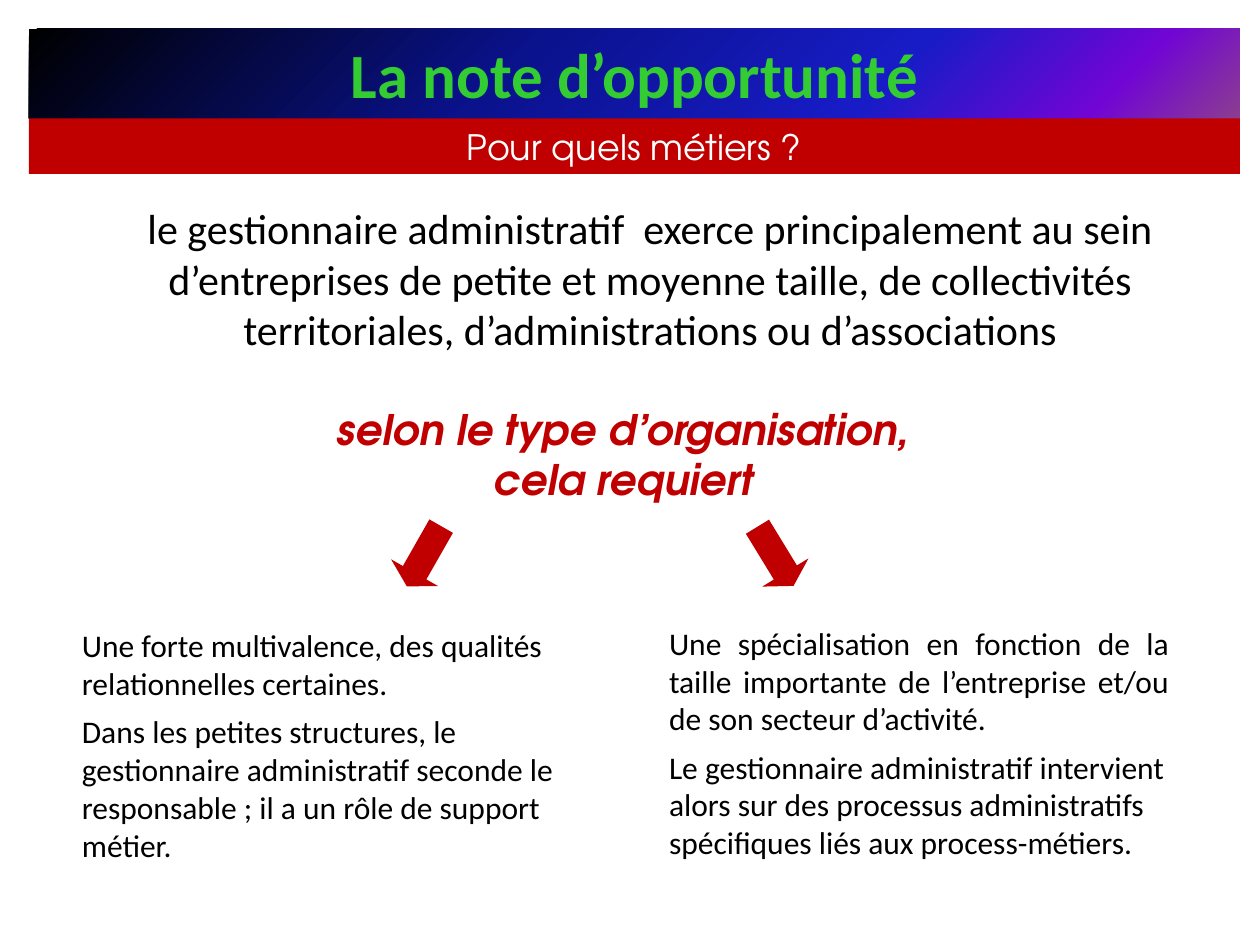
from lxml import etree
from pptx import Presentation
from pptx.dml.color import RGBColor
from pptx.enum.shapes import MSO_SHAPE
from pptx.enum.text import MSO_ANCHOR, MSO_AUTO_SIZE, PP_ALIGN
from pptx.oxml.ns import qn
from pptx.util import Inches, Pt

RECT, ARROW = MSO_SHAPE.RECTANGLE, MSO_SHAPE.DOWN_ARROW
TOP, MIDDLE = MSO_ANCHOR.TOP, MSO_ANCHOR.MIDDLE
LEFT, CENTER, JUSTIFY = PP_ALIGN.LEFT, PP_ALIGN.CENTER, PP_ALIGN.JUSTIFY
BLACK = RGBColor(0x00, 0x00, 0x00)
WHITE = RGBColor(0xFF, 0xFF, 0xFF)
RED = RGBColor(0xC0, 0x00, 0x00)
GREEN = RGBColor(0x33, 0xCC, 0x33)
STOPS = {0: BLACK, 40: RGBColor(0x0A, 0x12, 0x8C), 70: RGBColor(0x18, 0x1C, 0xC7),
         88: RGBColor(0x70, 0x05, 0xD4), 100: RGBColor(0x8C, 0x3D, 0x91)}
SANS, ROUND = "Calibri", "TeX Gyre Adventor"
EDGE, WIDE = 0.23, 9.61

deck = Presentation()
deck.slide_width, deck.slide_height = Inches(10), Inches(7.5)
slide = deck.slides.add_slide(deck.slide_layouts[3])
shapes = slide.shapes


def write(shape, lines, font, anchor=TOP, gap=0):
    """Fill a shape with (text, alignment) lines in one font format."""
    frame = shape.text_frame
    frame.word_wrap = True
    frame.auto_size = MSO_AUTO_SIZE.NONE
    frame.vertical_anchor = anchor
    for i, (text, align) in enumerate(lines):
        para = frame.add_paragraph() if i else frame.paragraphs[0]
        para.alignment = align
        para.space_before = Pt(gap if i else 0)
        run = para.add_run()
        run.text = text
        for name, value in font.items():
            if name == "color":
                run.font.color.rgb = value
            else:
                setattr(run.font, name, value)


def place(shape, *box):
    shape.left, shape.top, shape.width, shape.height = map(Inches, box)
    return shape


# Title band with its gradient
title = place(shapes.title, EDGE, 0.23, WIDE, 0.71)
title.fill.gradient()
title.fill.gradient_angle = 315
stops = title.element.spPr.find(qn("a:gradFill")).find(qn("a:gsLst"))
for stop in list(stops):
    stops.remove(stop)
for share, color in STOPS.items():
    stop = etree.SubElement(stops, qn("a:gs"), pos=str(share * 1000))
    etree.SubElement(stop, qn("a:srgbClr"), val=str(color))
write(title, [("La note d’opportunité", CENTER)],
      dict(size=Pt(36), name=SANS, bold=True, color=GREEN), MIDDLE)

# Red band and the two arrows
band = shapes.add_shape(RECT, 0, 0, 0, 0)
place(band, EDGE, 0.94, WIDE, 0.44)
write(band, [("Pour quels métiers ?", CENTER)],
      dict(size=Pt(20), name=ROUND, color=WHITE), MIDDLE)
reds = [band]
for left, turn in ((3.15, 29.7), (5.94, 328.6)):
    arrow = place(shapes.add_shape(ARROW, 0, 0, 0, 0), left, 4.14, 0.43, 0.55)
    arrow.adjustments[0], arrow.adjustments[1] = 0.5, 0.29
    arrow.rotation = turn
    reds.append(arrow)
for shape in reds:
    shape.shadow.inherit = False
    shape.fill.solid()
    shape.fill.fore_color.rgb = RED
    shape.line.fill.background()

# Introduction and the question that splits it
intro = place(shapes.add_textbox(0, 0, 0, 0), 0.94, 1.56, 8.44, 1.31)
write(intro, [("le gestionnaire administratif  exerce principalement au sein "
               "d’entreprises de petite et moyenne taille, de collectivités "
               "territoriales, d’administrations ou d’associations", CENTER)],
      dict(size=Pt(24), name=SANS, color=BLACK))
split = place(shapes.add_textbox(0, 0, 0, 0), 1.64, 3.15, 6.61, 0.9)
write(split, [("selon le type d’organisation,", CENTER), ("cela requiert", CENTER)],
      dict(size=Pt(24), name=ROUND, bold=True, italic=True, color=RED))

# The two answers
answers = [
    (1, (0.55, 4.92, 4.14, 2), [
        ("Une forte multivalence, des qualités relationnelles certaines.", LEFT),
        ("Dans les petites structures, le gestionnaire administratif seconde le "
         "responsable ; il a un rôle de support métier.", LEFT)]),
    (2, (5.21, 4.9, 4.17, 2), [
        ("Une spécialisation en fonction de la taille importante de l’entreprise "
         "et/ou de son secteur d’activité.", JUSTIFY),
        ("Le gestionnaire administratif intervient alors sur des processus "
         "administratifs spécifiques liés aux process-métiers.", LEFT)]),
]
for slot, box, lines in answers:
    body = place(slide.placeholders[slot], *box)
    write(body, lines, dict(size=Pt(18), name=SANS, color=BLACK), gap=6)
    for para in body.text_frame.paragraphs:
        props = para._p.get_or_add_pPr()
        props.set("marL", "0")
        props.set("indent", "0")
        etree.SubElement(props, qn("a:buNone"))

deck.save("out.pptx")
